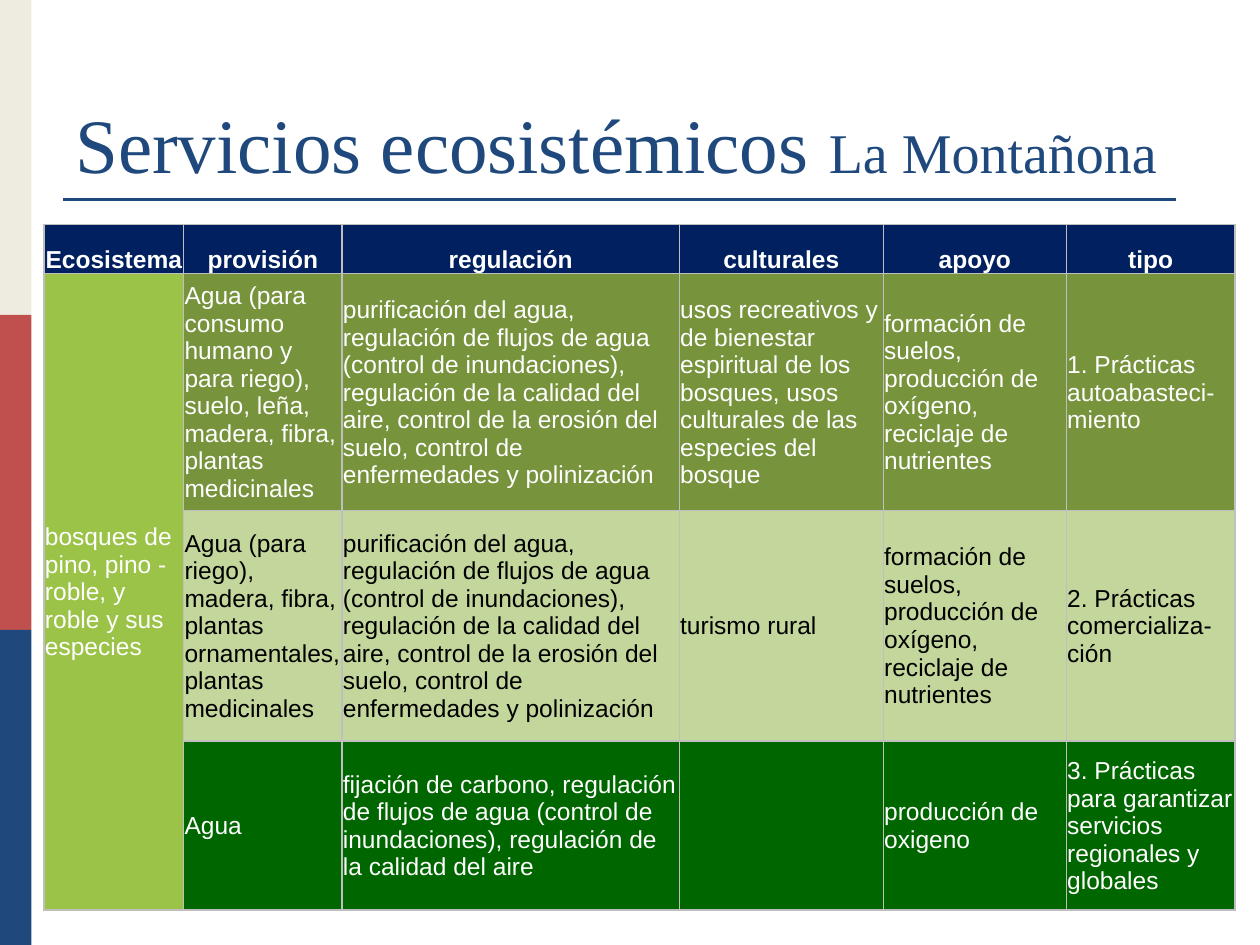
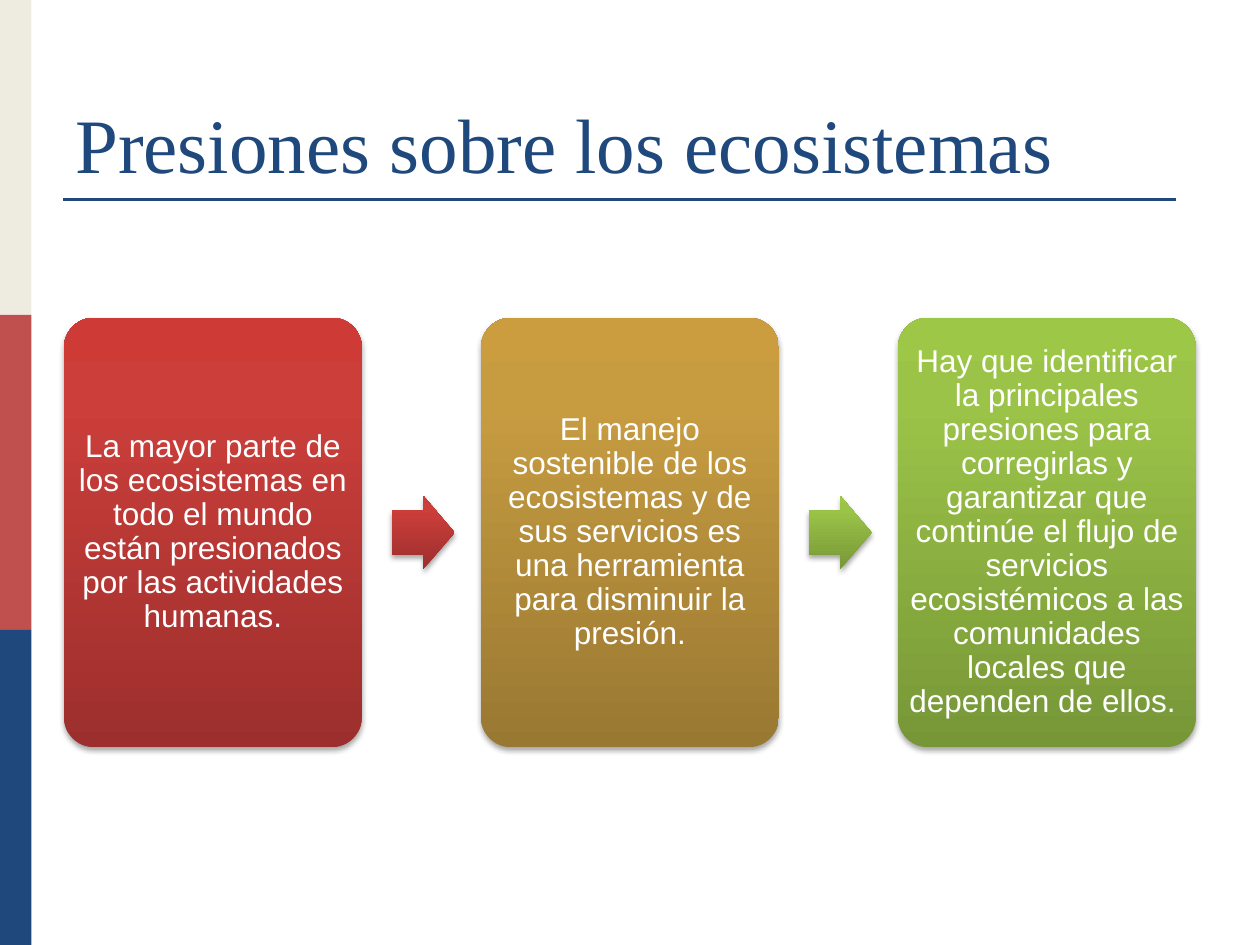
from lxml.etree import SubElement
from pptx import Presentation
from pptx.dml.color import RGBColor
from pptx.enum.shapes import MSO_CONNECTOR, MSO_SHAPE
from pptx.enum.text import MSO_ANCHOR as ANCHOR, PP_ALIGN as ALIGN
from pptx.oxml.ns import qn
from pptx.util import Pt

WIDTH, HEIGHT = 720, 540

COLORS = {
    "navy": "1F497D", "brick": "C0504D", "sand": "EEECE1",
    "header": "002060", "border": "BFBFBF", "white": "FFFFFF", "black": "000000",
    "forest": "9BC348", "olive": "77933C", "pale": "C3D69B", "deep": "006600",
    "red_low": "9C2F2D", "red_mid": "CB3E3A", "red_high": "CE3B37",
    "gold_low": "997832", "gold_mid": "C79C41", "gold_high": "CB9D3F",
    "green_low": "779737", "green_mid": "9BC348", "green_high": "9DC746",
}

COLUMN_WIDTHS = [79.8, 90.5, 192.7, 116.6, 104.6, 96.4]
ROW_HEIGHTS = [28.2, 135.2, 131.8, 96.6]
HEADERS = ["Ecosistema", "provisión", "regulación", "culturales", "apoyo", "tipo"]
ECOSYSTEM = "bosques de pino, pino - roble, y roble y sus especies"
REGULATION = ("purificación del agua, regulación de flujos de agua (control de "
              "inundaciones), regulación de la calidad del aire, control de la erosión "
              "del suelo, control de enfermedades y polinización")
SUPPORT = "formación de suelos, producción de oxígeno, reciclaje de nutrientes"
# Each row: fill, text colour, texts from the second column on
PRACTICES = [
    ("olive", "white", [
        "Agua (para consumo humano y para riego), suelo, leña, madera, fibra, "
        "plantas medicinales",
        REGULATION,
        "usos recreativos y de bienestar espiritual de los bosques, usos culturales "
        "de las especies del bosque",
        SUPPORT,
        "1. Prácticas autoabasteci-miento"]),
    ("pale", "black", [
        "Agua (para riego), madera, fibra, plantas ornamentales, plantas medicinales",
        REGULATION,
        "turismo rural",
        SUPPORT,
        "2. Prácticas comercializa-ción"]),
    ("deep", "white", [
        "Agua",
        "fijación de carbono, regulación de flujos de agua (control de inundaciones), "
        "regulación de la calidad del aire",
        "",
        "producción de oxigeno",
        "3. Prácticas para garantizar servicios regionales y globales"]),
]

PRESSURES = [
    ("red", "La mayor parte de los ecosistemas en todo el mundo están presionados "
            "por las actividades humanas."),
    ("gold", "El manejo sostenible de los ecosistemas y de sus servicios es una "
             "herramienta para disminuir la presión."),
    ("green", "Hay que identificar la principales presiones para corregirlas y "
              "garantizar que continúe el flujo de servicios ecosistémicos a las "
              "comunidades locales que dependen de ellos. "),
]
ARROW_TINTS = ["red", "green"]


def rgb(name):
    return RGBColor.from_string(COLORS[name])


def add_xml(parent, tag, **attributes):
    return SubElement(parent, qn(tag), {key: str(value) for key, value in attributes.items()})


class Deck:
    """Holds the presentation, its style and the slide being filled."""
    heading_font, body_font = "Times New Roman", "Arial"
    bands = ["sand", "brick", "navy"]

    def __init__(self):
        self.presentation = Presentation()
        self.presentation.slide_width = Pt(WIDTH)
        self.presentation.slide_height = Pt(HEIGHT)
        self.shapes = None

    def new_slide(self, *title_parts):
        """Start a slide; each title part is (text, size)."""
        layout = self.presentation.slide_layouts[6]
        self.shapes = self.presentation.slides.add_slide(layout).shapes
        band_height = HEIGHT / len(self.bands)
        for index, color in enumerate(self.bands):
            band = self.shape(MSO_SHAPE.RECTANGLE, 0, index * band_height, 18, band_height)
            band.fill.solid()
            band.fill.fore_color.rgb = rgb(color)
        self.rule(36, 672, 114)
        self.title(title_parts)

    def shape(self, kind, left, top, width, height):
        shape = self.shapes.add_shape(kind, Pt(left), Pt(top), Pt(width), Pt(height))
        shape.shadow.inherit = False
        shape.line.fill.background()
        return shape

    def rule(self, start, end, y):
        rule = self.shapes.add_connector(MSO_CONNECTOR.STRAIGHT, Pt(start), Pt(y), Pt(end), Pt(y))
        rule.line.color.rgb = rgb("navy")
        rule.line.width = Pt(1.5)
        add_xml(rule._element.spPr, "a:effectLst")

    def title(self, parts):
        frame = self.shapes.add_textbox(Pt(36), Pt(21.6), Pt(648), Pt(90)).text_frame
        frame.word_wrap = True
        frame.vertical_anchor = ANCHOR.BOTTOM
        for text, size in parts:
            run = frame.paragraphs[0].add_run()
            run.text = text
            self.style(run, size, "navy", font=self.heading_font)

    def style(self, run, size, color, bold=False, font=body_font):
        run.font.name = font
        run.font.size = Pt(size)
        run.font.bold = bold
        run.font.color.rgb = rgb(color)

    def glossy_shape(self, kind, left, top, width, height, tint):
        """A preset shape with a vertical gradient and a soft shadow."""
        shape = self.shape(kind, left, top, width, height)
        shape.fill.gradient()
        gradient = shape._element.spPr.find(qn("a:gradFill"))
        stops = gradient.find(qn("a:gsLst"))
        stops.clear()
        for position, level in ((0, "low"), (80, "mid"), (100, "high")):
            stop = add_xml(stops, "a:gs", pos=position * 1000)
            add_xml(stop, "a:srgbClr", val=COLORS[f"{tint}_{level}"])
        gradient.find(qn("a:lin")).set("ang", str(270 * 60000))
        effects = shape._element.spPr.find(qn("a:effectLst"))
        shadow = add_xml(effects, "a:outerShdw", blurRad=Pt(3.1), dist=Pt(1.8),
                         dir=90 * 60000, rotWithShape=0)
        add_xml(add_xml(shadow, "a:srgbClr", val=COLORS["black"]), "a:alpha", val=35000)
        return shape

    def card(self, left, top, width, height, tint, text):
        card = self.glossy_shape(MSO_SHAPE.ROUNDED_RECTANGLE, left, top, width, height, tint)
        card.adjustments[0] = 0.1
        frame = card.text_frame
        frame.text = text
        frame.word_wrap = True
        frame.vertical_anchor = ANCHOR.MIDDLE
        frame.margin_left = frame.margin_right = frame.margin_top = frame.margin_bottom = 0
        paragraph = frame.paragraphs[0]
        paragraph.alignment = ALIGN.CENTER
        paragraph.line_spacing = 0.9
        self.style(paragraph.runs[0], 18, "white")

    def arrow(self, left, top, width, height, tint):
        arrow = self.glossy_shape(MSO_SHAPE.RIGHT_ARROW, left, top, width, height, tint)
        arrow.adjustments[0] = 0.6
        arrow.adjustments[1] = 0.5

    def table(self, left, top, widths, heights):
        table = self.shapes.add_table(len(heights), len(widths), Pt(left), Pt(top),
                                      Pt(sum(widths)), Pt(sum(heights))).table
        table.first_row = table.horz_banding = False
        for column, width in zip(table.columns, widths):
            column.width = Pt(width)
        for row, height in zip(table.rows, heights):
            row.height = Pt(height)
        return table

    def cell(self, cell, text, fill, color="white", header=False):
        cell.margin_left = cell.margin_right = Pt(0.5)
        cell.margin_top = Pt(0.72)
        cell.margin_bottom = 0
        cell.vertical_anchor = ANCHOR.BOTTOM if header else ANCHOR.MIDDLE
        for side in ("L", "R", "T", "B"):
            border = add_xml(cell._tc.get_or_add_tcPr(), f"a:ln{side}", w=Pt(1))
            add_xml(add_xml(border, "a:solidFill"), "a:srgbClr", val=COLORS["border"])
        cell.fill.solid()
        cell.fill.fore_color.rgb = rgb(fill)
        cell.text_frame.text = text
        paragraph = cell.text_frame.paragraphs[0]
        paragraph.alignment = ALIGN.CENTER if header else ALIGN.LEFT
        for run in paragraph.runs:
            self.style(run, 14, color, bold=header)


def build_services(deck):
    deck.new_slide(("Servicios ecosistémicos ", 44), ("La Montañona", 32))
    services = deck.table(25.2, 128.2, COLUMN_WIDTHS, ROW_HEIGHTS)
    for column, header in enumerate(HEADERS):
        deck.cell(services.cell(0, column), header, "header", header=True)
    for row, (fill, color, texts) in enumerate(PRACTICES, start=1):
        deck.cell(services.cell(row, 0), ECOSYSTEM if row == 1 else "", "forest")
        for column, text in enumerate(texts, start=1):
            deck.cell(services.cell(row, column), text, fill, color)
    services.cell(1, 0).merge(services.cell(len(PRACTICES), 0))


def build_pressures(deck):
    deck.new_slide(("Presiones sobre los ecosistemas", 44))
    left, top, width, height = 36.6, 181.6, 170.2, 245.4
    arrow_width, arrow_height = 36, 42.2
    step = 1.4 * width
    for index, (tint, text) in enumerate(PRESSURES):
        deck.card(left + index * step, top, width, height, tint, text)
    for index, tint in enumerate(ARROW_TINTS):
        deck.arrow(left + index * step + 1.1 * width, top + (height - arrow_height) / 2,
                   arrow_width, arrow_height, tint)


def main():
    deck = Deck()
    build_services(deck)
    build_pressures(deck)
    deck.presentation.save("out.pptx")


if __name__ == "__main__":
    main()
